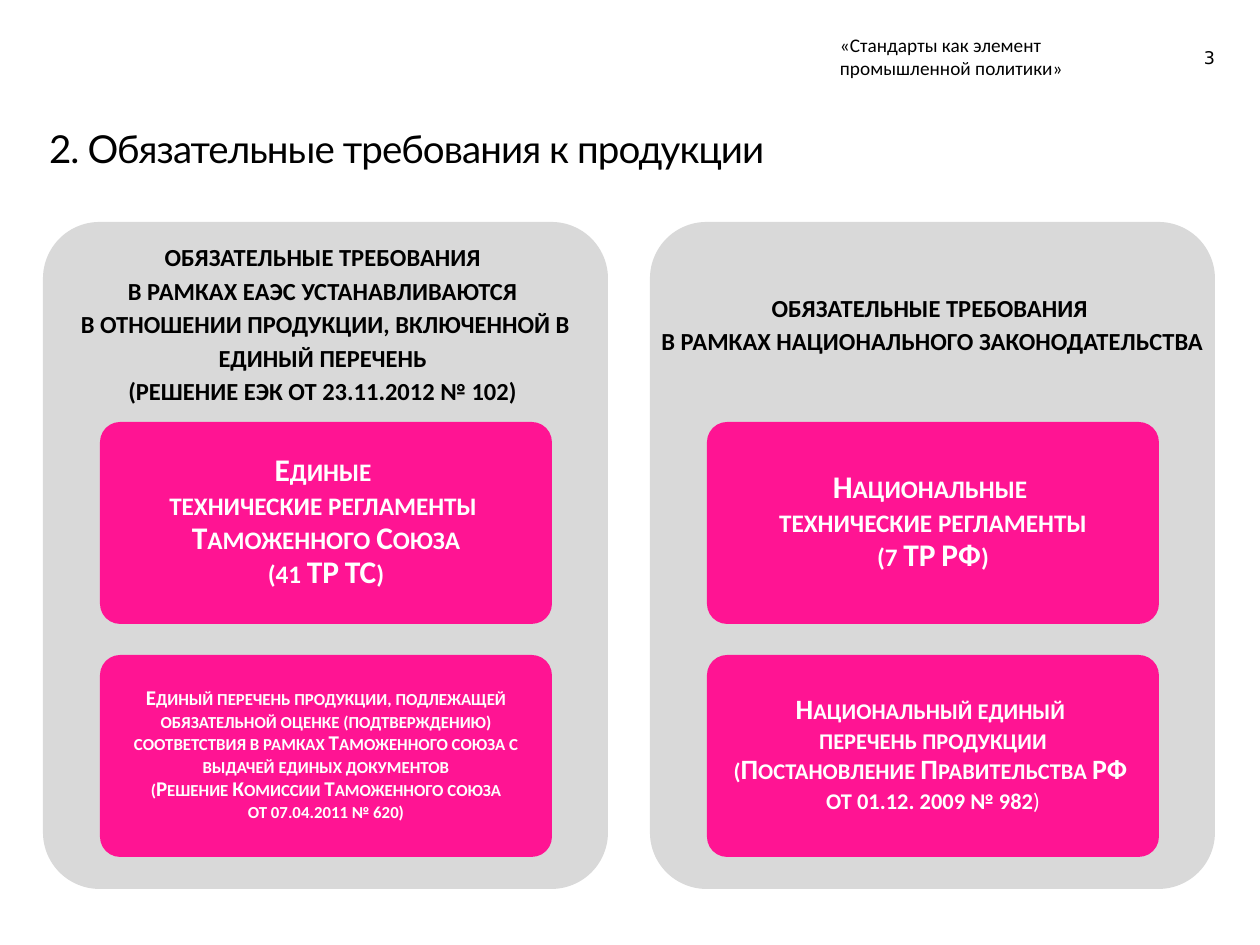
from pptx import Presentation
from pptx.dml.color import RGBColor
from pptx.enum.shapes import MSO_SHAPE
from pptx.enum.text import MSO_ANCHOR, MSO_AUTO_SIZE, PP_ALIGN
from pptx.util import Pt

PX = 914400 / 126  # EMU per pixel
GREY, PINK, BLACK, WHITE = "D9D9D9", "FF1493", "000000", "FFFFFF"

deck = Presentation()
deck.slide_width, deck.slide_height = round(1260 * PX), round(945 * PX)
slide = deck.slides.add_slide(deck.slide_layouts[5])


def panel(box, fill):
    shape = slide.shapes.add_shape(MSO_SHAPE.ROUNDED_RECTANGLE, *[round(v * PX) for v in box])
    shape.adjustments[0] = 0.1
    shape.shadow.inherit = False
    shape.fill.solid()
    shape.fill.fore_color.rgb = RGBColor.from_string(fill)
    shape.line.fill.background()


def write(frame, lines, size, color=BLACK, face="Calibri", bold=False, caps=False,
          align=PP_ALIGN.LEFT, space=1.0, inset=0, anchor=MSO_ANCHOR.TOP):
    frame.word_wrap = True
    frame.auto_size = MSO_AUTO_SIZE.NONE
    frame.vertical_anchor = anchor
    frame.margin_left = frame.margin_right = round(inset * PX)
    frame.margin_top = frame.margin_bottom = round(inset * PX)
    frame.text = "\n".join(lines)
    for para in frame.paragraphs:
        para.alignment, para.line_spacing = align, space
        font = para.font
        font.name, font.size, font.bold = face, Pt(size), bold
        font.color.rgb = RGBColor.from_string(color)
        if caps:
            font._element.set("cap", "small")
    return frame


# Title
title = slide.shapes.title
title.left, title.top, title.width, title.height = [round(v * PX) for v in (49, 125, 1162, 50)]
write(title.text_frame, ["2. Обязательные требования к продукции"], 22, face="Lato")
title.text_frame.paragraphs[0].font._element.set("spc", "-50")

# Running head and page number
for box, words, size, face, align in [
    ((840, 33, 323, 47), "«Стандарты как элемент промышленной политики»", 11, "Calibri", PP_ALIGN.LEFT),
    ((1173, 47, 42, 21), "3", 10, "DejaVu Sans", PP_ALIGN.RIGHT),
]:
    area = slide.shapes.add_textbox(*[round(v * PX) for v in box])
    write(area.text_frame, [words], size, face=face, align=align)

# Columns: heading lines, then cards as (size, inset, lines)
columns = [
    (["ОБЯЗАТЕЛЬНЫЕ ТРЕБОВАНИЯ ",
      "В РАМКАХ ЕАЭС УСТАНАВЛИВАЮТСЯ ",
      "В ОТНОШЕНИИ ПРОДУКЦИИ, ВКЛЮЧЕННОЙ В ЕДИНЫЙ ПЕРЕЧЕНЬ ",
      "(РЕШЕНИЕ ЕЭК ОТ 23.11.2012 № 102) "],
     [(18, 5, ["Единые ", "технические регламенты ", "Таможенного Союза", "(41 ТР ТС)"]),
      (12, 4, ["Единый перечень продукции, подлежащей обязательной оценке "
               "(подтверждению) соответствия в рамках Таможенного союза "
               "с выдачей единых документов",
               "(Решение Комиссии Таможенного союза",
               "от 07.04.2011 № 620)"])]),
    (["ОБЯЗАТЕЛЬНЫЕ ТРЕБОВАНИЯ ",
      "В РАМКАХ НАЦИОНАЛЬНОГО ЗАКОНОДАТЕЛЬСТВА"],
     [(18, 5, ["Национальные ", "технические регламенты", "(7 ТР РФ)"]),
      (16, 4, ["Национальный единый ", "перечень продукции",
               "(Постановление Правительства РФ ", "от 01.12. 2009 № 982"])]),
]
for col, (head, cards) in enumerate(columns):
    left = 43 + 607 * col
    panel((left, 222, 565, 667), GREY)
    area = slide.shapes.add_textbox(*[round(v * PX) for v in (left, 222, 565, 200)])
    write(area.text_frame, head, 14, bold=True, align=PP_ALIGN.CENTER,
          space=1.14, inset=8, anchor=MSO_ANCHOR.MIDDLE)
    for row, (size, inset, lines) in enumerate(cards):
        top = 422 + 233 * row
        panel((left + 57, top, 452, 202), PINK)
        area = slide.shapes.add_textbox(*[round(v * PX) for v in (left + 63, top + 6, 440, 189)])
        frame = write(area.text_frame, lines, size, WHITE, bold=True, caps=True,
                      align=PP_ALIGN.CENTER, space=0.9, inset=inset, anchor=MSO_ANCHOR.MIDDLE)

# The closing bracket of the last card is not bold
mark = frame.paragraphs[-1].add_run()
mark.text = ")"
mark.font.bold = False

deck.save("out.pptx")
